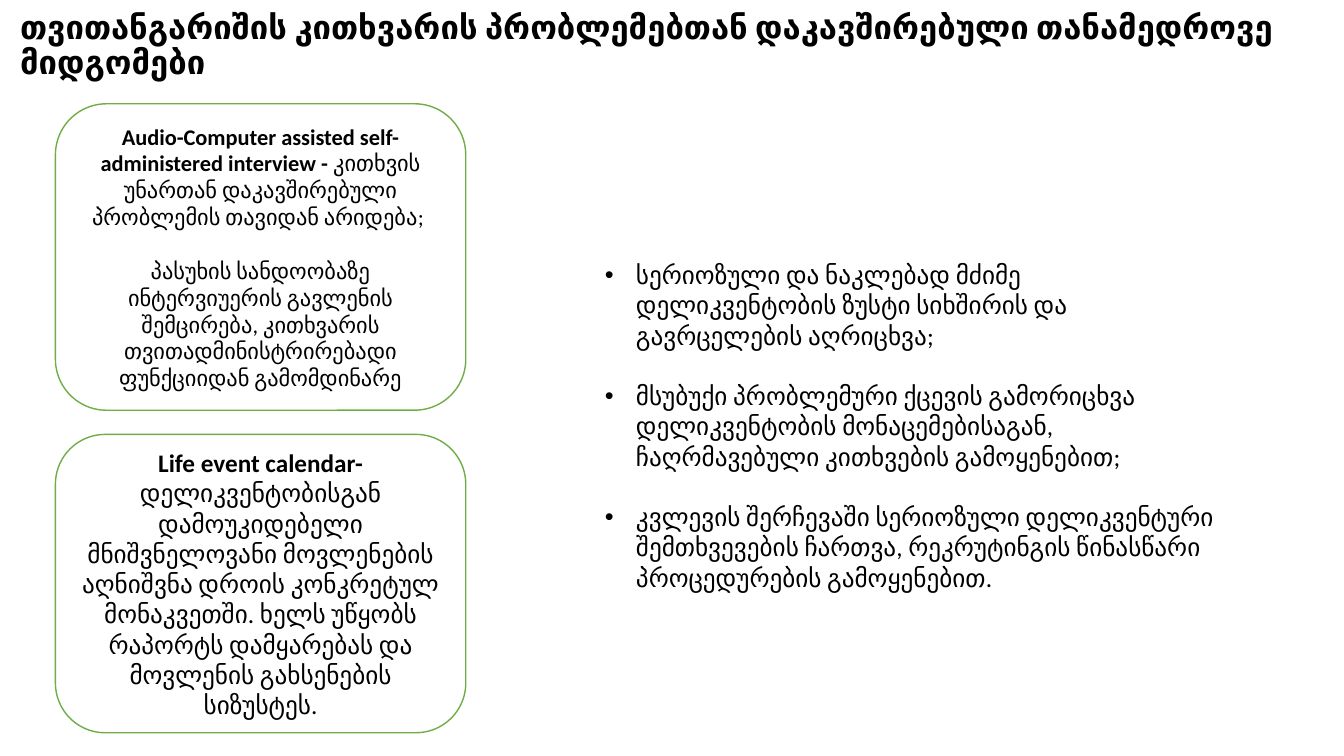
from collections import namedtuple
from dataclasses import dataclass

from lxml import etree
from pptx import Presentation, util as u
from pptx.dml.color import RGBColor
from pptx.enum import shapes, text
from pptx.oxml.ns import qn

Box = namedtuple("Box", "left top width height")


@dataclass(frozen=True)
class Theme:
    font: str = "Calibri"
    ink: RGBColor = RGBColor(0, 0, 0)
    paper: RGBColor = RGBColor(255, 255, 255)
    accent: RGBColor = RGBColor(0x70, 0xAD, 0x47)
    title_size: float = 23.4
    body_size: float = 18
    compact_size: float = 16
    line_width: float = 1
    blank_line: float = 1.2


THEME = Theme()
SLIDE_WIDTH, SLIDE_HEIGHT = 13.33, 7.5
TITLE_AREA = Box(0.1, 0.13, 12.91, 0.66)
METHODS_AREA = Box(0.55, 1.03, 4.07, 6.24)
APPROACHES_AREA = Box(5.9, 1.19, 6.37, 6.07)
CARD_GAP = 0.24
FIRST_CARD_HEIGHT = 3.04
BULLET_INDENT = 0.31

TITLE = "თვითანგარიშის კითხვარის პრობლემებთან დაკავშირებული თანამედროვე მიდგომები"
INTERVIEW = [
    ("Audio-Computer assisted self-administered interview - ",
     "კითხვის უნართან დაკავშირებული პრობლემის თავიდან არიდება; "),
    ("", "პასუხის სანდოობაზე ინტერვიუერის გავლენის შემცირება, კითხვარის "
         "თვითადმინისტრირებადი ფუნქციიდან გამომდინარე"),
]
CALENDAR = [
    ("Life event calendar-",
     "დელიკვენტობისგან დამოუკიდებელი მნიშვნელოვანი მოვლენების აღნიშვნა დროის "
     "კონკრეტულ მონაკვეთში. ხელს უწყობს რაპორტს დამყარებას და მოვლენის "
     "გახსენების სიზუსტეს."),
]
APPROACHES = [
    ("", "სერიოზული და ნაკლებად მძიმე დელიკვენტობის ზუსტი სიხშირის და "
         "გავრცელების აღრიცხვა;"),
    ("", "მსუბუქი პრობლემური ქცევის გამორიცხვა დელიკვენტობის მონაცემებისაგან, "
         "ჩაღრმავებული კითხვების გამოყენებით;"),
    ("", "კვლევის შერჩევაში სერიოზული დელიკვენტური შემთხვევების ჩართვა, "
         "რეკრუტინგის წინასწარი პროცედურების გამოყენებით."),
]


def place(box):
    return [u.Inches(length) for length in box]


def write(frame, entries, size, align):
    frame.word_wrap = True
    frame.vertical_anchor = text.MSO_ANCHOR.MIDDLE
    for index, (term, detail) in enumerate(entries):
        paragraph = frame.paragraphs[0] if index == 0 else frame.add_paragraph()
        paragraph.alignment = align
        paragraph.font.name = THEME.font
        paragraph.font.size = u.Pt(size)
        paragraph.font.color.rgb = THEME.ink
        if index < len(entries) - 1:
            paragraph.space_after = u.Pt(size * THEME.blank_line)
        for wording, bold in ((term, True), (detail, False)):
            if wording:
                run = paragraph.add_run()
                run.text = wording
                run.font.bold = bold


def add_panel(slide, box, preset, entries, size, align):
    panel = slide.shapes.add_shape(preset, *place(box))
    panel.shadow.inherit = False
    panel.fill.solid()
    panel.fill.fore_color.rgb = THEME.paper
    panel.line.fill.background()
    write(panel.text_frame, entries, size, align)
    return panel


def add_title(slide, box):
    title = slide.shapes.add_textbox(*place(box))
    write(title.text_frame, [(TITLE, "")], THEME.title_size, text.PP_ALIGN.LEFT)
    title.text_frame.paragraphs[0].line_spacing = 0.9


def add_methods(slide, box):
    second_height = box.height - FIRST_CARD_HEIGHT - CARD_GAP
    top = box.top
    for entries, size, height in (
        (INTERVIEW, THEME.compact_size, FIRST_CARD_HEIGHT),
        (CALENDAR, THEME.body_size, second_height),
    ):
        card = add_panel(slide, Box(box.left, top, box.width, height),
                         shapes.MSO_SHAPE.ROUNDED_RECTANGLE, entries, size,
                         text.PP_ALIGN.CENTER)
        card.line.color.rgb = THEME.accent
        card.line.width = u.Pt(THEME.line_width)
        top += height + CARD_GAP


def add_approaches(slide, box):
    approaches = add_panel(slide, box, shapes.MSO_SHAPE.RECTANGLE, APPROACHES,
                           THEME.body_size, text.PP_ALIGN.LEFT)
    indent = u.Inches(BULLET_INDENT)
    for paragraph in approaches.text_frame.paragraphs:
        properties = paragraph.font._element.getparent()
        properties.set("marL", str(indent))
        properties.set("indent", str(-indent))
        bullet_font = etree.Element(qn("a:buFont"), typeface="Arial")
        bullet = etree.Element(qn("a:buChar"), char="•")
        paragraph.font._element.addprevious(bullet_font)
        paragraph.font._element.addprevious(bullet)


def main():
    presentation = Presentation()
    presentation.slide_width = u.Inches(SLIDE_WIDTH)
    presentation.slide_height = u.Inches(SLIDE_HEIGHT)
    slide = presentation.slides.add_slide(presentation.slide_layouts[6])
    slide.background.fill.solid()
    slide.background.fill.fore_color.rgb = THEME.paper
    add_title(slide, TITLE_AREA)
    add_methods(slide, METHODS_AREA)
    add_approaches(slide, APPROACHES_AREA)
    presentation.save("out.pptx")


if __name__ == "__main__":
    main()
